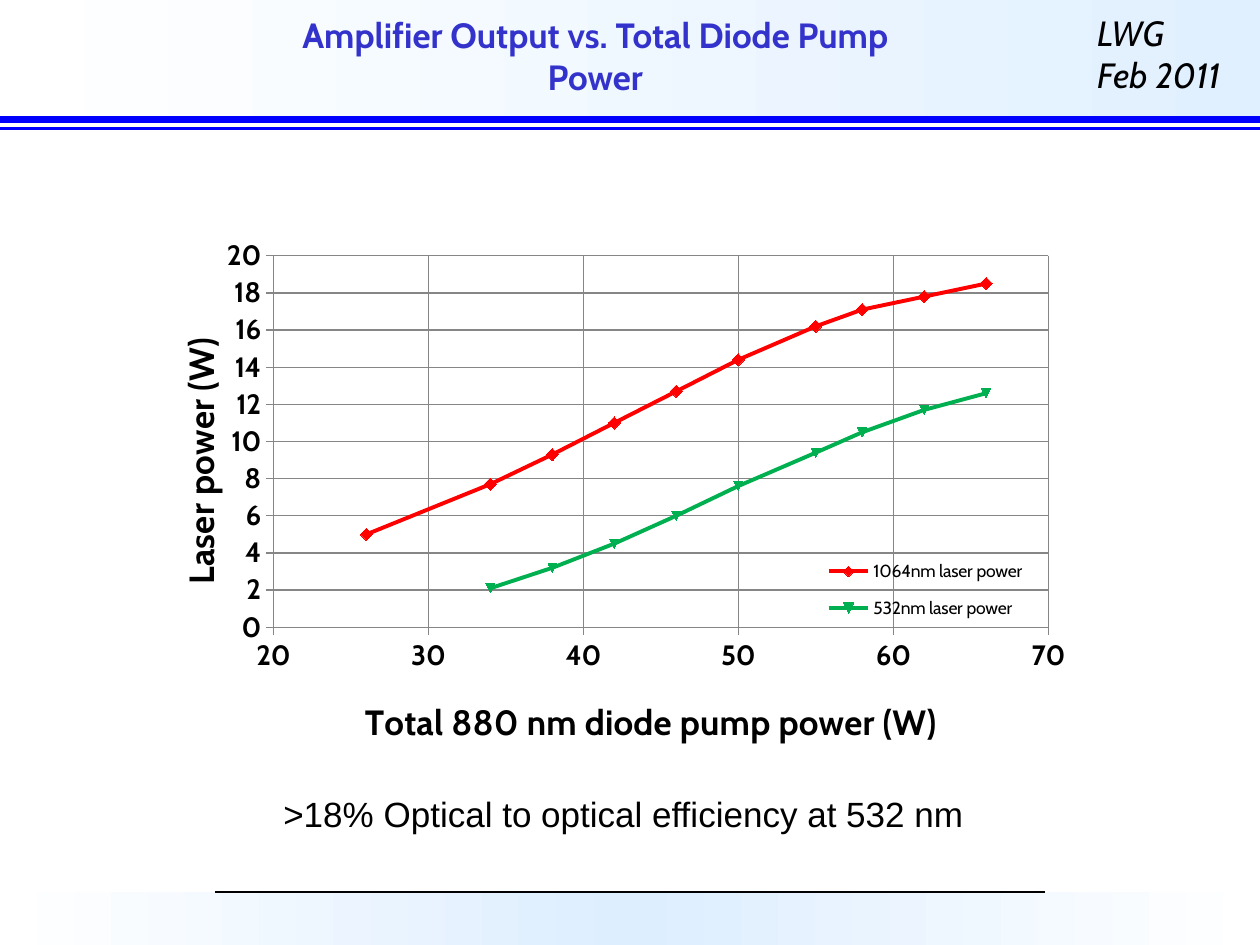
from copy import deepcopy
from dataclasses import dataclass

from lxml import etree
from pptx import Presentation
from pptx.chart.data import XyChartData
from pptx.dml.color import RGBColor
from pptx.enum import chart as charts, shapes, text
from pptx.oxml.ns import qn
from pptx import util as u


@dataclass(frozen=True)
class Theme:
    """Colours, fonts and type sizes of the slide."""
    white: str = "FFFFFF"
    header_tint: str = "E1F0FF"
    footer_tint: str = "DDEEFF"
    rule: str = "0000FF"
    title: str = "3333CC"
    ink: str = "000000"
    grid: str = "868686"
    infrared: str = "FF0000"
    green: str = "00B050"
    face: str = "Cabin"
    plain_face: str = "Arial"
    large: int = 20
    tick: int = 16
    small: int = 10


THEME = Theme()
COLUMNS, ROWS = 100, 75
WIDTH, HEIGHT = u.Inches(10), u.Inches(7.5)
PUMP = [66, 62, 58, 55, 50, 46, 42, 38, 34, 26]
INFRARED = [18.5, 17.8, 17.1, 16.2, 14.4, 12.7, 11, 9.3, 7.7, 5]
GREEN = [12.6, 11.7, 10.5, 9.4, 7.6, 6, 4.5, 3.2, 2.1]


def place(column, row, columns, rows):
    """Turn grid units into left, top, width and height."""
    return (round(column * WIDTH / COLUMNS), round(row * HEIGHT / ROWS),
            round(columns * WIDTH / COLUMNS), round(rows * HEIGHT / ROWS))


def style(font, size, color=THEME.ink, face=THEME.face, bold=False, italic=False):
    """Format a font."""
    font.size, font.name, font.bold, font.italic = u.Pt(size), face, bold, italic
    font.color.rgb = RGBColor.from_string(color)


def write(frame, words, align=None, anchor=None, **font):
    """Fill a text frame, one paragraph per line of words."""
    frame.word_wrap = True
    frame.vertical_anchor = anchor
    for index, line in enumerate(words.split("\n")):
        paragraph = frame.paragraphs[0] if index == 0 else frame.add_paragraph()
        paragraph.alignment = align
        run = paragraph.add_run()
        run.text = line
        style(run.font, **font)


def add_text(slide, box, words, **options):
    """Add a text box."""
    write(slide.shapes.add_textbox(*place(*box)).text_frame, words, **options)


def add_band(slide, box, colors):
    """Add a horizontal gradient band with evenly spaced colours."""
    band = slide.shapes.add_shape(shapes.MSO_SHAPE.RECTANGLE, *place(*box))
    band.shadow.inherit = False
    band.line.fill.background()
    band.fill.gradient()
    band.fill.gradient_angle = 0
    stops = band._element.spPr.find(qn("a:gradFill")).find(qn("a:gsLst"))
    for _ in colors[2:]:
        stops.append(deepcopy(stops[0]))
    for index, (stop, color) in enumerate(zip(band.fill.gradient_stops, colors)):
        stop.color.rgb = RGBColor.from_string(color)
        stop.position = index / (len(colors) - 1)


def add_rule(slide, start, end, row, color, weight):
    """Add a horizontal rule."""
    left, top, width, _ = place(start, row, end - start, 0)
    rule = slide.shapes.add_connector(shapes.MSO_CONNECTOR.STRAIGHT, left, top, left + width, top)
    rule.line.color.rgb = RGBColor.from_string(color)
    rule.line.width = u.Pt(weight)
    etree.SubElement(rule._element.spPr, qn("a:effectLst"))


def set_layout(parent, index, inner=False, **shares):
    """Fix a chart part at shares of the chart's size."""
    for old in parent.findall(qn("c:layout")):
        parent.remove(old)
    layout = etree.Element(qn("c:layout"))
    manual = etree.SubElement(layout, qn("c:manualLayout"))
    settings = {"layoutTarget": "inner"} if inner else {}
    settings.update(xMode="edge", yMode="edge", **shares)
    for name, value in settings.items():
        etree.SubElement(manual, qn(f"c:{name}")).set("val", str(value))
    parent.insert(index, layout)


def format_axis(axis, words, x, y):
    """Format an axis, its grid and its title."""
    write(axis.axis_title.text_frame, words, size=THEME.large, bold=True)
    set_layout(axis.axis_title._element, 1, x=x, y=y)
    axis.has_major_gridlines = True
    for line in (axis.format.line, axis.major_gridlines.format.line):
        line.color.rgb = RGBColor.from_string(THEME.grid)
        line.width = u.Pt(0.75)
    axis.major_tick_mark = charts.XL_TICK_MARK.CROSS
    axis.minor_tick_mark = charts.XL_TICK_MARK.NONE
    style(axis.tick_labels.font, THEME.tick, bold=True)


def format_series(series, color, symbol, size):
    """Format a line and its markers."""
    shade = RGBColor.from_string(color)
    series.smooth = False
    series.format.line.color.rgb = shade
    series.format.line.width = u.Pt(2.25)
    series.marker.style, series.marker.size = symbol, size
    series.marker.format.fill.solid()
    series.marker.format.fill.fore_color.rgb = shade
    series.marker.format.line.color.rgb = shade


def add_power_chart(slide, box):
    """Add the scatter chart of laser power against pump power."""
    data = XyChartData()
    for name, powers in (("1064nm laser power", INFRARED), ("532nm laser power", GREEN)):
        points = data.add_series(name)
        for pump, power in zip(PUMP, powers):
            points.add_data_point(pump, power)
    chart = slide.shapes.add_chart(charts.XL_CHART_TYPE.XY_SCATTER_LINES, *place(*box), data).chart
    chart.has_title = False
    style(chart.font, THEME.small)
    plot = chart.plots[0]
    plot.vary_by_categories = False
    infrared, green = plot.series
    format_series(infrared, THEME.infrared, charts.XL_MARKER_STYLE.DIAMOND, 7)
    format_series(green, THEME.green, charts.XL_MARKER_STYLE.AUTOMATIC, 5)
    green._element.find(qn("c:idx")).set("val", "2")
    format_axis(chart.category_axis, "Total 880 nm diode pump power (W)", 0.23, 0.85)
    format_axis(chart.value_axis, "Laser power (W)", 0.03, 0.28)
    chart.category_axis.minimum_scale = 20
    chart.category_axis.major_unit = 10
    chart.has_legend = True
    chart.legend.position = charts.XL_LEGEND_POSITION.RIGHT
    chart.legend.include_in_layout = False
    style(chart.legend.font, THEME.small)
    set_layout(chart.legend._element, 1, x=0.71, y=0.62, w=0.24, h=0.14)
    set_layout(plot._element.getparent(), 0, inner=True, x=0.14, y=0.16, w=0.82, h=0.59)


def set_title(slide, box, words):
    """Place the title in front of the header band."""
    title = slide.shapes.title
    title.left, title.top, title.width, title.height = place(*box)
    write(title.text_frame, words, align=text.PP_ALIGN.CENTER, anchor=text.MSO_ANCHOR.MIDDLE,
          size=THEME.large, color=THEME.title, bold=True)
    slide.shapes._spTree.append(title._element)


def main():
    """Build and save the slide."""
    deck = Presentation()
    deck.slide_width, deck.slide_height = WIDTH, HEIGHT
    slide = deck.slides.add_slide(deck.slide_layouts[5])
    add_band(slide, (0, 0, COLUMNS, 9.2), (THEME.white, THEME.header_tint))
    add_rule(slide, 0, COLUMNS, 9.5, THEME.rule, 4)
    add_rule(slide, 0, COLUMNS, 10.2, THEME.rule, 1.5)
    add_band(slide, (0, 70.8, COLUMNS, 4.2), (THEME.white, THEME.footer_tint, THEME.white))
    add_rule(slide, 17.1, 82.9, 70.8, THEME.ink, 1)
    add_text(slide, (86.1, 0.4, 13.5, 7.7), "LWG\nFeb 2011", size=THEME.large, italic=True)
    add_power_chart(slide, (11.2, 12.3, 75, 50))
    set_title(slide, (18.9, 0, 56.7, 8.8), "Amplifier Output vs. Total Diode Pump Power")
    add_text(slide, (21.5, 62.4, 56.2, 4.4), ">18% Optical to optical efficiency at 532 nm",
             size=THEME.large, face=THEME.plain_face)
    deck.save("out.pptx")


if __name__ == "__main__":
    main()
